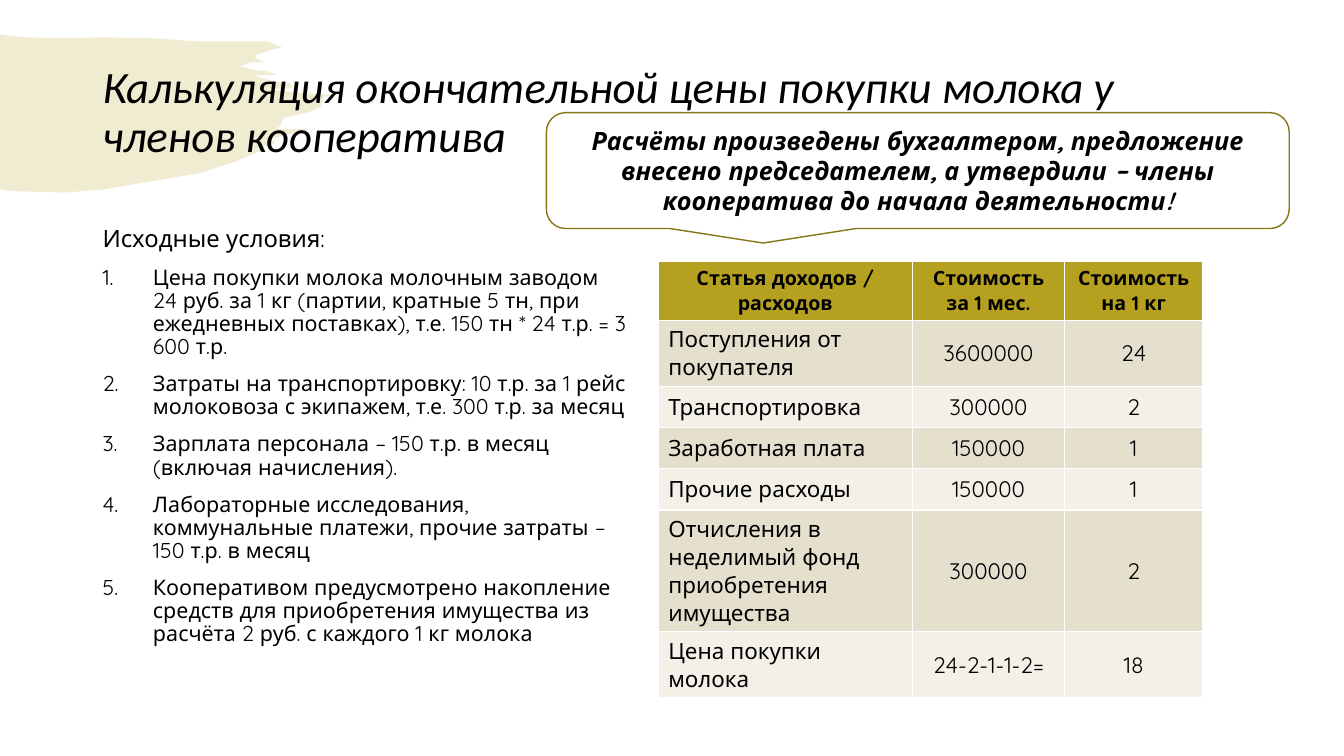
from dataclasses import dataclass
from typing import Optional

from lxml import etree
from pptx import Presentation
from pptx import util as u
from pptx.dml.color import RGBColor
from pptx.enum import shapes, text
from pptx.oxml import ns

OLIVE = RGBColor(0xB5, 0xA0, 0x20)
DARK_OLIVE = RGBColor(0x86, 0x76, 0x18)
SAND = RGBColor(0xE5, 0xDF, 0xCD)
CREAM = RGBColor(0xF3, 0xF0, 0xE8)
WHITE = RGBColor(0xFF, 0xFF, 0xFF)
BLACK = RGBColor(0, 0, 0)
BODY_FONT = "Quicksand"
LEFT, CENTER = text.PP_ALIGN.LEFT, text.PP_ALIGN.CENTER
MIDDLE, TOP = text.MSO_ANCHOR.MIDDLE, text.MSO_ANCHOR.TOP


@dataclass(frozen=True)
class Box:
    left: float
    top: float
    width: float
    height: float

    def lengths(self) -> tuple:
        return tuple(u.Cm(v) for v in (self.left, self.top, self.width, self.height))


@dataclass(frozen=True)
class CostRow:
    item: str
    monthly: str
    per_kilo: str


TITLE_BOX = Box(2.33, 1.02, 29.21, 3.68)
BODY_BOX = Box(2.33, 5.59, 13.72, 11.56)
TABLE_BOX = Box(16.59, 6.58, 13.72, 7.28)
CALLOUT_BOX = Box(13.77, 2.84, 18.72, 2.92)
COLUMN_WIDTHS = (6.4, 3.84, 3.48)

CONDITIONS = (
    "Цена покупки молока молочным заводом 24 руб. за 1 кг (партии, кратные 5 тн, "
    "при ежедневных поставках), т.е. 150 тн * 24 т.р. = 3 600 т.р.",
    "Затраты на транспортировку: 10 т.р. за 1 рейс молоковоза с экипажем, т.е. 300 т.р. за месяц",
    "Зарплата персонала – 150 т.р. в месяц (включая начисления).",
    "Лабораторные исследования, коммунальные платежи, прочие затраты – 150 т.р. в месяц",
    "Кооперативом предусмотрено накопление средств для приобретения имущества "
    "из расчёта 2 руб. с каждого 1 кг молока",
)

COSTS = (
    CostRow("Статья доходов / расходов", "Стоимость за 1 мес.", "Стоимость на 1 кг"),
    CostRow("Поступления от покупателя", "3600000", "24"),
    CostRow("Транспортировка", "300000", "2"),
    CostRow("Заработная плата", "150000", "1"),
    CostRow("Прочие расходы", "150000", "1"),
    CostRow("Отчисления в неделимый фонд приобретения имущества", "300000", "2"),
    CostRow("Цена покупки молока", "24-2-1-1-2=", "18"),
)

# Brush stroke outline, in hundredths of an inch
BRUSH = (
    (0, 34), (6, 35), (25, 37), (66, 38), (102, 37), (151, 38), (194, 41), (248, 41),
    (266, 41), (280, 47), (271, 49), (255, 54), (253, 57), (256, 59), (262, 62),
    (248, 62), (238, 66), (246, 68), (256, 70), (266, 71), (275, 74), (251, 75),
    (263, 78), (273, 81), (280, 82), (288, 83), (290, 85), (287, 88), (284, 88),
    (263, 88), (295, 92), (330, 94), (321, 97), (318, 106), (307, 111), (300, 113),
    (283, 116), (280, 120), (278, 125), (274, 128), (308, 128), (269, 138), (273, 142),
    (252, 148), (263, 148), (232, 161), (197, 172), (102, 188), (65, 191), (23, 190),
    (7, 189), (0, 188),
)


def write(para, content: str, *, size: float, font: str = BODY_FONT, bold: bool = False,
          italic: bool = False, align=LEFT, spacing: Optional[float] = None,
          before: float = 0) -> None:
    para.alignment = align
    para.space_before = u.Pt(before)
    if spacing:
        para.line_spacing = spacing
    span = para.add_run()
    span.text = content
    span.font.name, span.font.size = font, u.Pt(size)
    span.font.bold, span.font.italic = bold, italic
    span.font.color.rgb = BLACK


def place(shape, box: Box) -> None:
    shape.left, shape.top, shape.width, shape.height = box.lengths()


def set_bullet(para, numbered: bool) -> None:
    props = para._p.get_or_add_pPr()
    indent = u.Cm(1.27) if numbered else 0
    props.set("marL", str(indent))
    props.set("indent", str(-indent))
    if numbered:
        etree.SubElement(props, ns.qn("a:buAutoNum")).set("type", "arabicPeriod")
    else:
        etree.SubElement(props, ns.qn("a:buNone"))


def add_brush(page) -> None:
    builder = page.shapes.build_freeform(*BRUSH[0], scale=u.Cm(2.54) / 100)
    builder.add_line_segments(BRUSH[1:], close=True)
    brush = builder.convert_to_shape()
    brush.shadow.inherit = False
    brush.fill.solid()
    brush.fill.fore_color.rgb = OLIVE
    color = brush.element.spPr.find(".//" + ns.qn("a:srgbClr"))
    etree.SubElement(color, ns.qn("a:alpha")).set("val", "20000")
    brush.line.fill.background()
    page.shapes.title.element.addprevious(brush.element)


def add_title(page) -> None:
    title = page.shapes.title
    place(title, TITLE_BOX)
    frame = title.text_frame
    frame.auto_size = text.MSO_AUTO_SIZE.NONE
    frame.vertical_anchor = MIDDLE
    write(frame.paragraphs[0], "Калькуляция окончательной цены покупки молока у членов кооператива",
          size=32, font="Calibri", italic=True, spacing=0.9)


def add_conditions(page) -> None:
    body = page.placeholders[1]
    place(body, BODY_BOX)
    frame = body.text_frame
    frame.auto_size = text.MSO_AUTO_SIZE.NONE
    frame.vertical_anchor = TOP
    heading = frame.paragraphs[0]
    write(heading, "Исходные условия:", size=17, spacing=0.9, before=10)
    set_bullet(heading, numbered=False)
    for condition in CONDITIONS:
        para = frame.add_paragraph()
        write(para, condition, size=15.3, spacing=0.9, before=10)
        set_bullet(para, numbered=True)


def add_costs(page) -> None:
    table = page.shapes.add_table(len(COSTS), len(COLUMN_WIDTHS), *TABLE_BOX.lengths()).table
    for column, width in zip(table.columns, COLUMN_WIDTHS):
        column.width = u.Cm(width)
    for r, row in enumerate(COSTS):
        header = r == 0
        fill = OLIVE if header else (SAND if r % 2 else CREAM)
        for c, content in enumerate((row.item, row.monthly, row.per_kilo)):
            cell = table.cell(r, c)
            cell.fill.solid()
            cell.fill.fore_color.rgb = fill
            cell.vertical_anchor = TOP if header else MIDDLE
            write(cell.text_frame.paragraphs[0], content, size=14 if header else 16,
                  bold=header, align=CENTER if header or c else LEFT)


def add_callout(page) -> None:
    callout = page.shapes.add_shape(shapes.MSO_SHAPE.ROUNDED_RECTANGULAR_CALLOUT,
                                    *CALLOUT_BOX.lengths())
    callout.shadow.inherit = False
    callout.fill.solid()
    callout.fill.fore_color.rgb = WHITE
    callout.line.color.rgb = DARK_OLIVE
    callout.line.width = u.Pt(1)
    frame = callout.text_frame
    frame.word_wrap = True
    frame.vertical_anchor = MIDDLE
    write(frame.paragraphs[0],
          "Расчёты произведены бухгалтером, предложение внесено председателем, "
          "а утвердили – члены кооператива до начала деятельности!",
          size=18, bold=True, italic=True, align=CENTER)


def main() -> None:
    deck = Presentation()
    deck.slide_width, deck.slide_height = u.Cm(33.87), u.Cm(19.05)
    page = deck.slides.add_slide(deck.slide_layouts[1])
    add_brush(page)
    add_title(page)
    add_conditions(page)
    add_costs(page)
    add_callout(page)
    deck.save("out.pptx")


if __name__ == "__main__":
    main()
